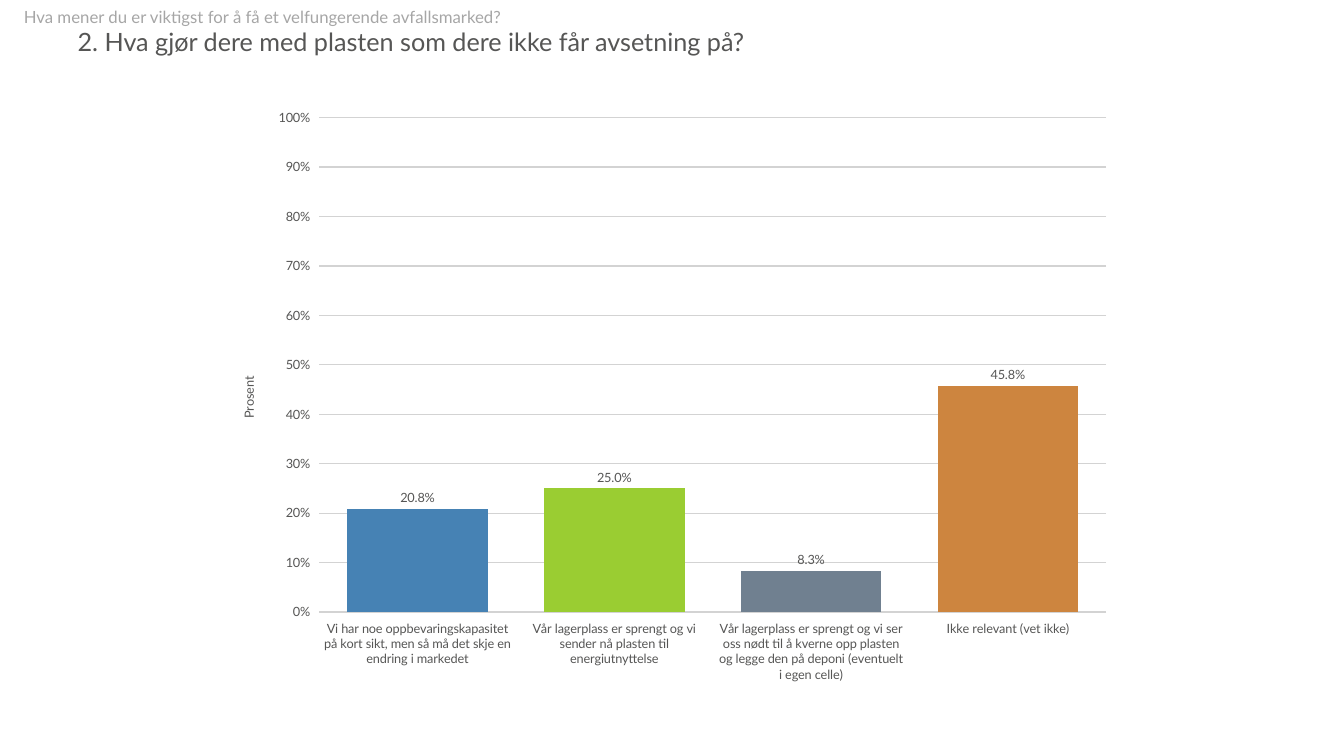
from dataclasses import dataclass

from lxml import etree
from pptx import Presentation
from pptx.chart.data import CategoryChartData
from pptx.dml.color import RGBColor
from pptx.enum.chart import XL_CHART_TYPE, XL_LABEL_POSITION, XL_TICK_MARK
from pptx.enum.text import MSO_ANCHOR
from pptx.oxml.ns import qn
from pptx.util import Pt

EMU_PER_PX = 9144  # 100 px to the inch


@dataclass(frozen=True)
class Theme:
    font: str = "Lato"
    text: str = "565655"
    muted: str = "A6A6A6"
    grid: str = "D3D3D3"
    bars: tuple = ("4682B4", "9ACD32", "708090", "CD853F")
    title_size: float = 19.8
    header_size: float = 13.2
    chart_size: float = 10


THEME = Theme()

ANSWERS = {
    "Vi har noe oppbevaringskapasitet på kort sikt, men så må det skje en endring i markedet": 0.208,
    "Vår lagerplass er sprengt og vi sender nå plasten til energiutnyttelse": 0.25,
    "Vår lagerplass er sprengt og vi ser oss nødt til å kverne opp plasten "
    "og legge den på deponi (eventuelt i egen celle)": 0.083,
    "Ikke relevant (vet ikke)": 0.458,
}


def px(*lengths):
    return [length * EMU_PER_PX for length in lengths]


def style_font(font, size, color):
    font.name = THEME.font
    font.size = Pt(size)
    font.bold = False
    font.color.rgb = RGBColor.from_string(color)


def add_text(slide, box, text, size, color, left_inset, line_spacing):
    text_frame = slide.shapes.add_textbox(*px(*box)).text_frame
    text_frame.word_wrap = True
    text_frame.vertical_anchor = MSO_ANCHOR.TOP
    text_frame.margin_left, text_frame.margin_right = px(left_inset, 10)
    text_frame.margin_top, text_frame.margin_bottom = px(5, 5)
    text_frame.text = text
    paragraph = text_frame.paragraphs[0]
    paragraph.line_spacing = line_spacing
    style_font(paragraph.runs[0].font, size, color)


def set_layout(parent, index, **fractions):
    """Place a chart part by fractions of the chart's size."""
    for layout in parent.findall(qn("c:layout")):
        parent.remove(layout)
    layout = etree.Element(qn("c:layout"))
    manual = etree.SubElement(layout, qn("c:manualLayout"))
    settings = {"xMode": "edge", "yMode": "edge", **fractions}
    if "w" in fractions:
        settings = {"layoutTarget": "inner", **settings}
    for name, value in settings.items():
        etree.SubElement(manual, qn(f"c:{name}")).set("val", str(value))
    parent.insert(index, layout)


def style_axis(axis):
    axis.major_tick_mark = XL_TICK_MARK.CROSS
    axis.minor_tick_mark = XL_TICK_MARK.NONE
    axis.format.line.fill.background()
    style_font(axis.tick_labels.font, THEME.chart_size, THEME.text)


def add_answer_chart(slide, box):
    chart_data = CategoryChartData(number_format="0.0%")
    chart_data.categories = list(ANSWERS)
    chart_data.add_series("Series 1", list(ANSWERS.values()))
    chart = slide.shapes.add_chart(
        XL_CHART_TYPE.COLUMN_CLUSTERED, *px(*box), chart_data
    ).chart
    chart.has_legend = False
    chart.has_title = False
    style_font(chart.font, THEME.chart_size, THEME.text)

    # Axes and grid
    value_axis = chart.value_axis
    style_axis(chart.category_axis)
    style_axis(value_axis)
    value_axis.minimum_scale, value_axis.maximum_scale = 0, 1
    value_axis.major_unit = 0.1
    value_axis.tick_labels.number_format = "0%"
    value_axis.tick_labels.number_format_is_linked = False
    value_axis.has_major_gridlines = True
    grid_line = value_axis.major_gridlines.format.line
    grid_line.color.rgb = RGBColor.from_string(THEME.grid)
    grid_line.width = Pt(1)

    # Axis title
    title_frame = value_axis.axis_title.text_frame
    title_frame.text = "Prosent"
    style_font(title_frame.paragraphs[0].runs[0].font, THEME.chart_size, THEME.text)

    # Bars and labels
    plot = chart.plots[0]
    plot.gap_width = 40
    plot.vary_by_categories = False
    for index, color in enumerate(THEME.bars):
        bar = plot.series[0].points[index].format
        bar.fill.solid()
        bar.fill.fore_color.rgb = RGBColor.from_string(color)
        bar.line.fill.background()
    plot.has_data_labels = True
    labels = plot.data_labels
    labels.show_value = True
    labels.number_format = "0.0%"
    labels.number_format_is_linked = False
    labels.position = XL_LABEL_POSITION.OUTSIDE_END
    style_font(labels.font, THEME.chart_size, THEME.text)

    # Plot and axis title positions
    plot_area = chart.element.find(f".//{qn('c:plotArea')}")
    set_layout(plot_area, 0, x=0.11, y=0.03, w=0.87, h=0.83)
    set_layout(value_axis.axis_title.element, 1, x=0.02, y=0.46)


def build_question_slide(slide, box):
    left, top, width, height = box
    add_answer_chart(slide, (left + 240, top + 109, width - 480, height - 175))
    add_text(
        slide, (left, top, width, 28),
        "Hva mener du er viktigst for å få et velfungerende avfallsmarked?",
        THEME.header_size, THEME.muted, left_inset=26, line_spacing=1.1,
    )
    add_text(
        slide, (left + 75, top + 26, width - 147, 66),
        "2. Hva gjør dere med plasten som dere ikke får avsetning på?",
        THEME.title_size, THEME.text, left_inset=10, line_spacing=0.95,
    )


def main():
    presentation = Presentation()
    width, height = 1469, 826
    presentation.slide_width, presentation.slide_height = px(width, height)
    slide = presentation.slides.add_slide(presentation.slide_layouts[6])
    build_question_slide(slide, (0, 0, width, height))
    presentation.save("out.pptx")


if __name__ == "__main__":
    main()
